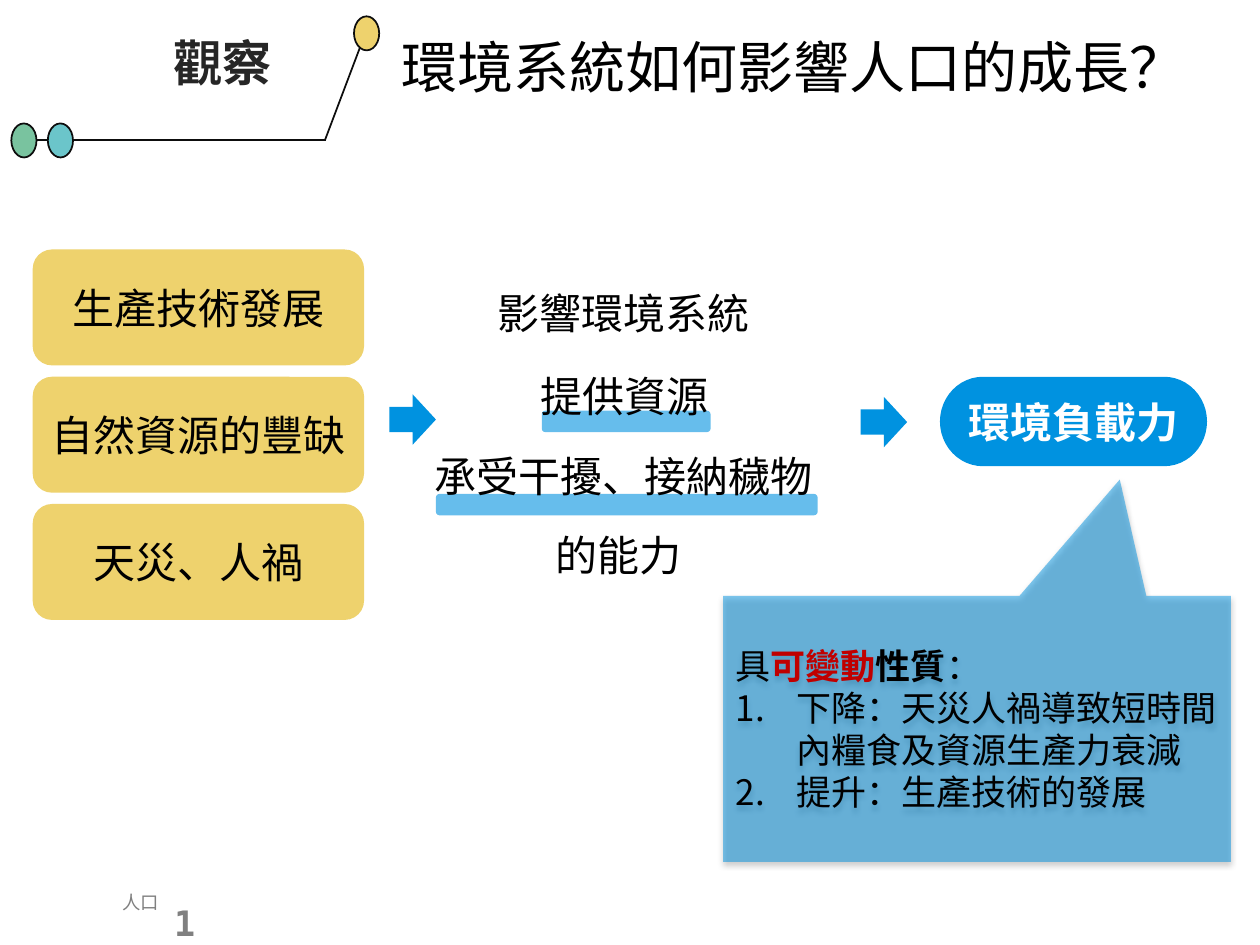
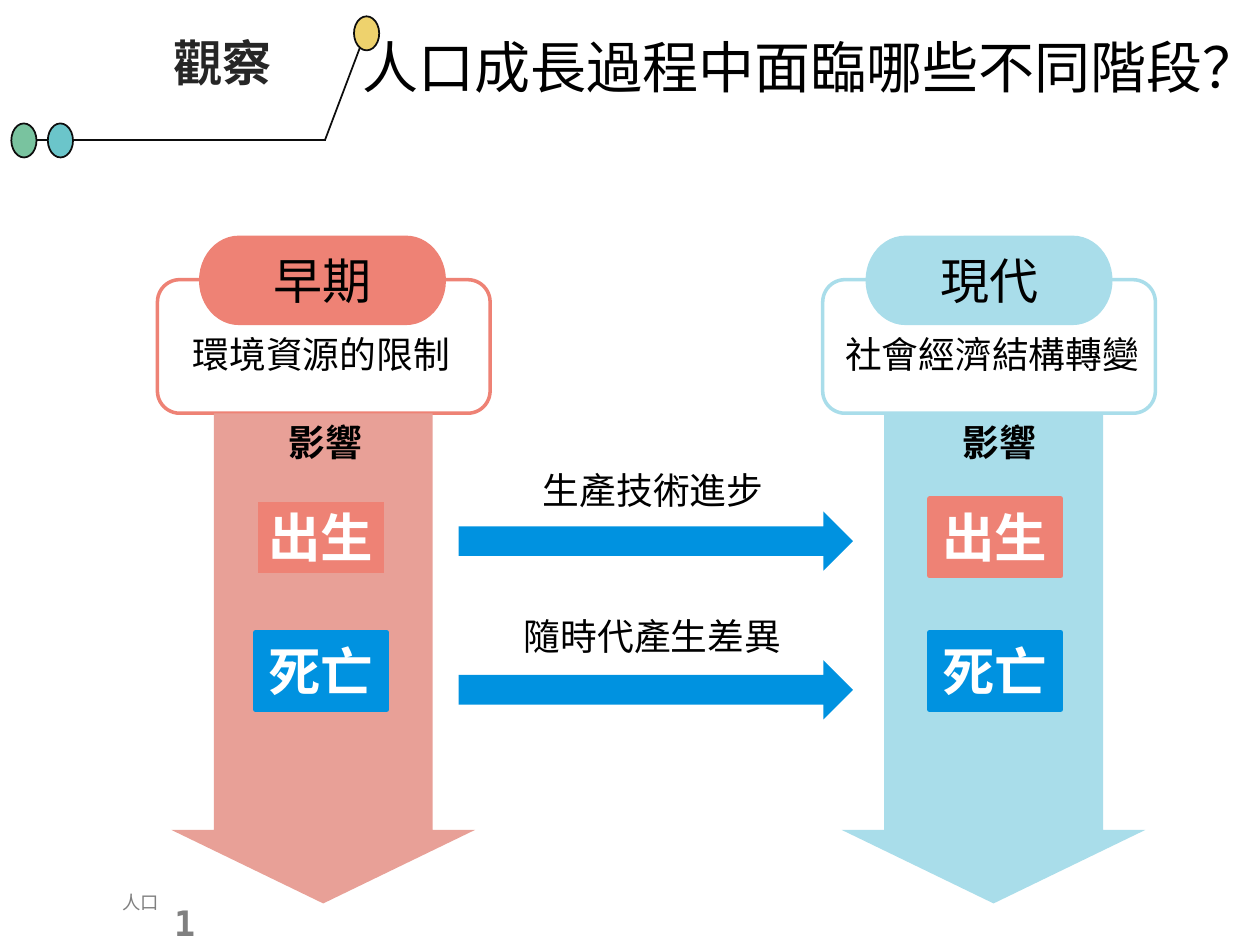
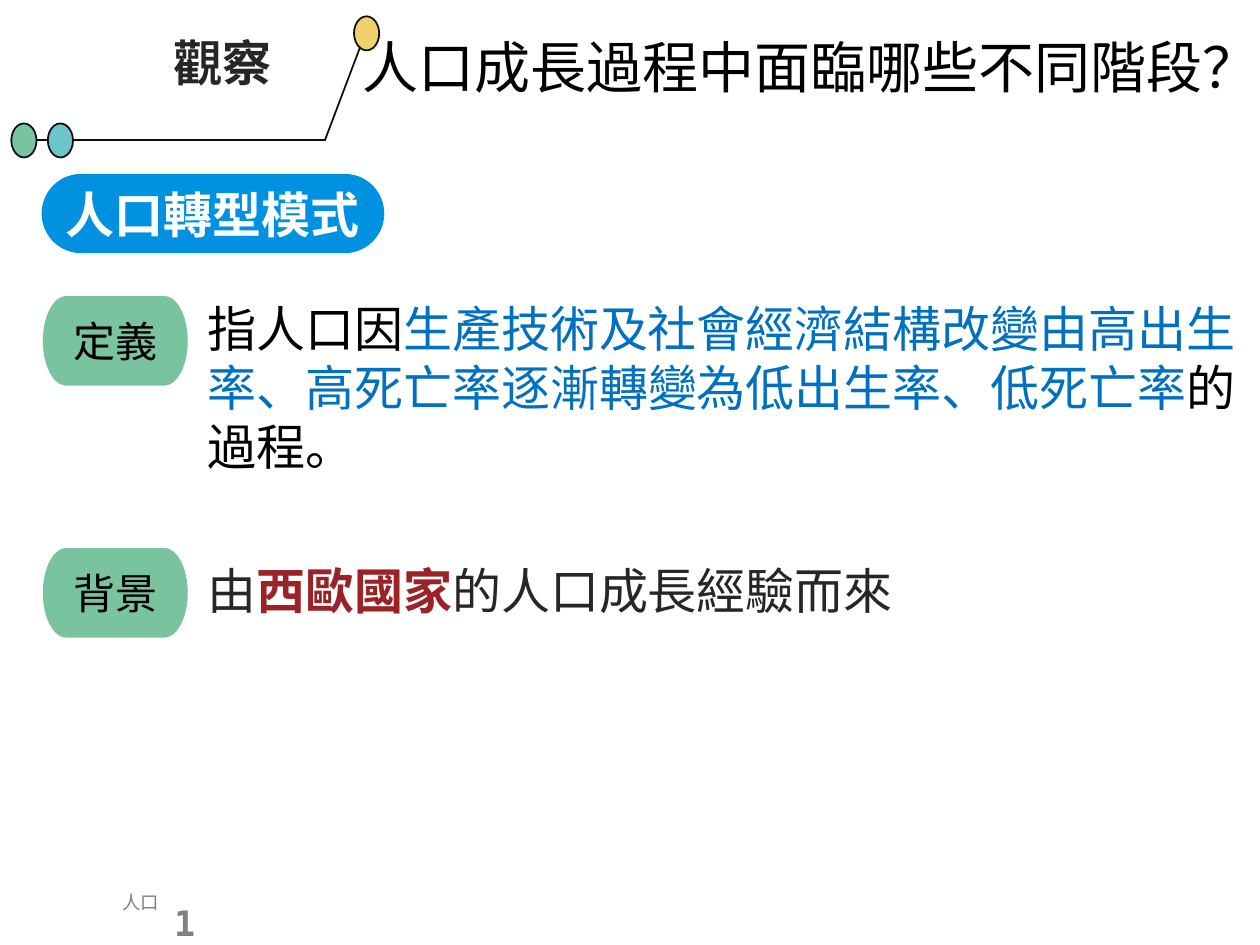
from dataclasses import dataclass

from lxml import etree
from pptx import Presentation
from pptx.dml.color import RGBColor
from pptx.enum.shapes import MSO_CONNECTOR, MSO_SHAPE as SHAPE
from pptx.enum.text import MSO_ANCHOR as ANCHOR, PP_ALIGN as ALIGN
from pptx.oxml.ns import qn
from pptx.util import Inches, Pt


@dataclass(frozen=True)
class Theme:
    # Colours
    black: str = "000000"
    white: str = "FFFFFF"
    ink: str = "262626"
    outline: str = "0D0D0D"
    grey: str = "808080"
    blue: str = "0092E0"
    text_blue: str = "0070C0"
    yellow: str = "EED26D"
    teal: str = "6BC5CA"
    green: str = "79C39F"
    coral: str = "EE8275"
    pale_coral: str = "E8A097"
    pale_blue: str = "A9DDEA"
    red: str = "C00000"
    dark_red: str = "9B2226"
    # Fonts
    cjk: str = "Noto Sans CJK TC"
    header: str = "Noto Sans CJK SC"
    mono: str = "DejaVu Sans Mono"
    title_font: str = "Calibri"
    pill_font: str = "Arial"
    # Type sizes
    title: float = 32
    chip: float = 30
    heading: float = 28
    label: float = 24
    note: float = 21
    callout: float = 20
    footer: float = 10.5


T = Theme()


def rgb(code):
    return RGBColor.from_string(code)


# Text
def style(paragraph, size, font=T.cjk, color=T.black, bold=None, align=None):
    if align is not None:
        paragraph.alignment = align
    face = paragraph.font
    face.size, face.name, face.bold = Pt(size), font, bold
    face.color.rgb = rgb(color)
    # Chinese glyphs take the East Asian face
    east_asian = T.cjk if font in (T.title_font, T.pill_font) else font
    latin = face._element.find(qn("a:latin"))
    latin.addnext(etree.Element(qn("a:ea"), typeface=east_asian))


def write(paragraph, parts):
    """Fill a paragraph with a string or (text, colour, bold) parts."""
    if isinstance(parts, str):
        parts = [(parts, None, None)]
    for text, color, bold in parts:
        run = paragraph.add_run()
        run.text = text
        if color:
            run.font.color.rgb = rgb(color)
        if bold is not None:
            run.font.bold = bold


def add_text(slide, box, parts, size, wrap=False, **look):
    frame = slide.shapes.add_textbox(*map(Inches, box)).text_frame
    frame.word_wrap = wrap
    paragraph = frame.paragraphs[0]
    write(paragraph, parts)
    style(paragraph, size, **look)
    return frame


# Shapes
def add_shape(slide, kind, box, fill=None, line=None, width=1, alpha=None,
              adjust=(), rotation=0):
    shape = slide.shapes.add_shape(kind, *map(Inches, box))
    shape.shadow.inherit = False
    shape.rotation = rotation
    for index, value in enumerate(adjust):
        shape.adjustments[index] = value
    if fill:
        shape.fill.solid()
        shape.fill.fore_color.rgb = rgb(fill)
        if alpha:
            color = shape.fill._xPr.find(qn("a:solidFill"))[0]
            etree.SubElement(color, qn("a:alpha"), val=str(alpha * 1000))
    else:
        shape.fill.background()
    if line:
        shape.line.color.rgb = rgb(line)
        shape.line.width = Pt(width)
    else:
        shape.line.fill.background()
    return shape


def add_label(slide, kind, box, fill, text, size, align=ALIGN.CENTER,
              anchor=ANCHOR.MIDDLE, line=None, width=1, adjust=(), **look):
    shape = add_shape(slide, kind, box, fill, line, width, adjust=adjust)
    frame = shape.text_frame
    frame.word_wrap = False
    frame.vertical_anchor = anchor
    write(frame.paragraphs[0], text)
    style(frame.paragraphs[0], size, align=align, **look)


def add_line(slide, start, end):
    line = slide.shapes.add_connector(MSO_CONNECTOR.STRAIGHT,
                                      *map(Inches, (*start, *end)))
    line.line.color.rgb = rgb(T.outline)
    line.line.width = Pt(1)
    etree.SubElement(line._element.spPr, qn("a:effectLst"))


# Shared header and footer
def add_page(prs, title, title_left, title_width):
    slide = prs.slides.add_slide(prs.slide_layouts[6])

    number = add_text(slide, (1.31, 7.08, 0.31, 0.48), "1", T.callout,
                      wrap=True, font=T.mono, color=T.grey, bold=True,
                      align=ALIGN.CENTER)
    number.vertical_anchor = ANCHOR.MIDDLE
    number.margin_left = number.margin_right = Inches(0.07)
    number.margin_top = number.margin_bottom = Inches(0.04)
    number.paragraphs[0].font._element.set("spc", "450")

    add_line(slide, (0.26, 1.11), (2.59, 1.11))
    add_line(slide, (2.89, 0.29), (2.58, 1.11))
    for left, top, color in ((0.38, 0.98, T.teal), (2.81, 0.13, T.yellow),
                             (0.09, 0.98, T.green)):
        add_shape(slide, SHAPE.OVAL, (left, top, 0.2, 0.27), color,
                  line=T.outline, rotation=359.5)

    add_text(slide, (1.07, 0.21, 1.39, 0.57), "觀察", T.heading, wrap=True,
             font=T.header, color=T.ink, bold=True, align=ALIGN.CENTER)
    add_text(slide, (0.06, 7.02, 1.3, 0.28), "人口", T.footer, wrap=True,
             font=T.header, color=T.grey, align=ALIGN.RIGHT)
    title_frame = add_text(slide, (title_left, 0.21, title_width, 0.64),
                           title, T.title, font=T.title_font)
    title_frame.margin_right = 0
    return slide


# Slide 1
def add_callout(slide):
    callout = add_shape(slide, SHAPE.RECTANGULAR_CALLOUT,
                        (5.74, 4.73, 4.03, 2.11), T.blue, alpha=50,
                        adjust=(0.281, -0.938))
    effects = callout._element.spPr.find(qn("a:effectLst"))
    shadow = etree.SubElement(effects, qn("a:outerShdw"), blurRad="40000",
                              dist="20000", dir="5400000", rotWithShape="0")
    color = etree.SubElement(shadow, qn("a:srgbClr"), val=T.black)
    etree.SubElement(color, qn("a:alpha"), val="38000")

    frame = callout.text_frame
    frame.word_wrap = True
    frame.vertical_anchor = ANCHOR.MIDDLE
    lead = frame.paragraphs[0]
    write(lead, [("具", None, None), ("可變動", T.red, True),
                 ("性質", None, True), ("：", None, None)])
    style(lead, T.callout, align=ALIGN.LEFT)
    for text in ("下降：天災人禍導致短時間內糧食及資源生產力衰減",
                 "提升：生產技術的發展"):
        item = frame.add_paragraph()
        write(item, text)
        props = item._p.get_or_add_pPr()
        indent = Inches(0.48)
        props.set("marL", str(indent))
        props.set("indent", str(-indent))
        etree.SubElement(props, qn("a:buFont"), typeface="+mj-lt")
        etree.SubElement(props, qn("a:buAutoNum"), type="arabicPeriod")
        style(item, T.callout, align=ALIGN.LEFT)


def build_capacity(prs):
    slide = add_page(prs, "環境系統如何影響人口的成長？", 3.09, 6.48)

    # Highlights under the key phrases
    for box in ((4.3, 3.26, 1.34, 0.17), (3.46, 3.92, 3.03, 0.17)):
        add_shape(slide, SHAPE.ROUNDED_RECTANGLE, box, T.blue, alpha=60)

    # Factors
    for row, factor in enumerate(("生產技術發展", "自然資源的豐缺", "天災、人禍")):
        add_label(slide, SHAPE.ROUNDED_RECTANGLE,
                  (0.26, 1.98 + 1.01 * row, 2.63, 0.92), T.yellow, factor, T.label)

    # Effects
    for left, top, width, effect in ((3.85, 2.23, 2.22, "影響環境系統"),
                                     (4.19, 2.89, 1.55, "提供資源"),
                                     (3.35, 3.53, 3.23, "承受干擾、接納穢物"),
                                     (4.31, 4.15, 1.3, "的能力")):
        add_text(slide, (left, top, width, 0.5), effect, T.label)

    # Result
    for left, top in ((3.09, 3.13), (6.83, 3.15)):
        add_shape(slide, SHAPE.RIGHT_ARROW, (left, top, 0.37, 0.4), T.blue)
    add_label(slide, SHAPE.FLOWCHART_TERMINATOR, (7.46, 2.99, 2.12, 0.71),
              T.blue, "環境負載力", T.label, color=T.white, bold=True)
    add_callout(slide)


# Slide 2
def add_era(slide, name, cause, color, arrow_color, birth_line,
            frame_left, pill_left, cause_left, cause_width, arrow_left, chip_left):
    add_shape(slide, SHAPE.ROUNDED_RECTANGLE, (frame_left, 2.22, 2.64, 1.06),
              line=color, width=2)
    add_label(slide, SHAPE.FLOWCHART_TERMINATOR, (pill_left, 1.87, 1.96, 0.71),
              color, name, T.heading, font=T.pill_font)
    add_text(slide, (cause_left, 2.58, cause_width, 0.45), cause, T.note)
    add_shape(slide, SHAPE.RIGHT_ARROW, (arrow_left, 4.02, 3.89, 2.41),
              arrow_color, adjust=(0.721, 0.242), rotation=90)
    for top, rate, fill, line in ((5.02, "死亡", T.blue, T.blue),
                                  (3.96, "出生", T.coral, birth_line)):
        add_label(slide, SHAPE.RECTANGLE, (chip_left, top, 1.04, 0.61), fill,
                  rate, T.chip, align=ALIGN.LEFT, anchor=ANCHOR.TOP,
                  line=line, width=3, color=T.white, bold=True)
    add_text(slide, (chip_left + 0.16, 3.28, 0.79, 0.45), "影響", T.note, bold=True)


def build_stages(prs, title):
    slide = add_page(prs, title, 2.78, 7.22)
    add_era(slide, "早期", "環境資源的限制", T.coral, T.pale_coral, T.pale_coral,
            frame_left=1.25, pill_left=1.58, cause_left=1.43, cause_width=2.26,
            arrow_left=0.62, chip_left=2.03)
    add_era(slide, "現代", "社會經濟結構轉變", T.pale_blue, T.pale_blue, T.coral,
            frame_left=6.53, pill_left=6.87, cause_left=6.61, cause_width=2.56,
            arrow_left=5.94, chip_left=7.38)

    # Changes from one era to the next
    for arrow_top, left, top, width, change in (
            (4.06, 4.21, 3.66, 1.97, "生產技術進步"),
            (5.24, 4.06, 4.82, 2.26, "隨時代產生差異")):
        add_shape(slide, SHAPE.RIGHT_ARROW, (3.64, arrow_top, 3.13, 0.47), T.blue)
        add_text(slide, (left, top, width, 0.45), change, T.note)


# Slide 3
def build_transition(prs, title):
    slide = add_page(prs, title, 2.78, 7.22)
    add_label(slide, SHAPE.ROUNDED_RECTANGLE, (0.33, 1.38, 2.72, 0.63), T.blue,
              "人口轉型模式", T.heading, align=ALIGN.LEFT, adjust=(0.5,),
              color=T.white, bold=True)
    for top, tag in ((2.35, "定義"), (4.35, "背景")):
        add_label(slide, SHAPE.FLOWCHART_TERMINATOR, (0.34, top, 1.15, 0.71),
                  T.green, tag, T.label, font=T.pill_font)

    add_text(slide, (1.55, 2.32, 8.4, 1.51),
             [("指人口因", None, None),
              ("生產技術及社會經濟結構改變由高出生率、高死亡率逐漸轉變為低出生率、低死亡率",
               T.text_blue, None),
              ("的過程。", None, None)],
             T.heading, wrap=True, font=T.pill_font)
    background = add_text(slide, (1.55, 4.35, 7.56, 0.71),
                          [("由", None, None), ("西歐國家", T.dark_red, True),
                           ("的人口成長經驗而來", None, None)],
                          T.heading, wrap=True, font=T.title_font, color=T.ink,
                          align=ALIGN.JUSTIFY)
    background.paragraphs[0].line_spacing = 1.1


def main():
    prs = Presentation()
    prs.slide_width, prs.slide_height = Inches(10), Inches(7.5)
    stages_title = "人口成長過程中面臨哪些不同階段？"
    build_capacity(prs)
    build_stages(prs, stages_title)
    build_transition(prs, stages_title)
    prs.save("out.pptx")


if __name__ == "__main__":
    main()
